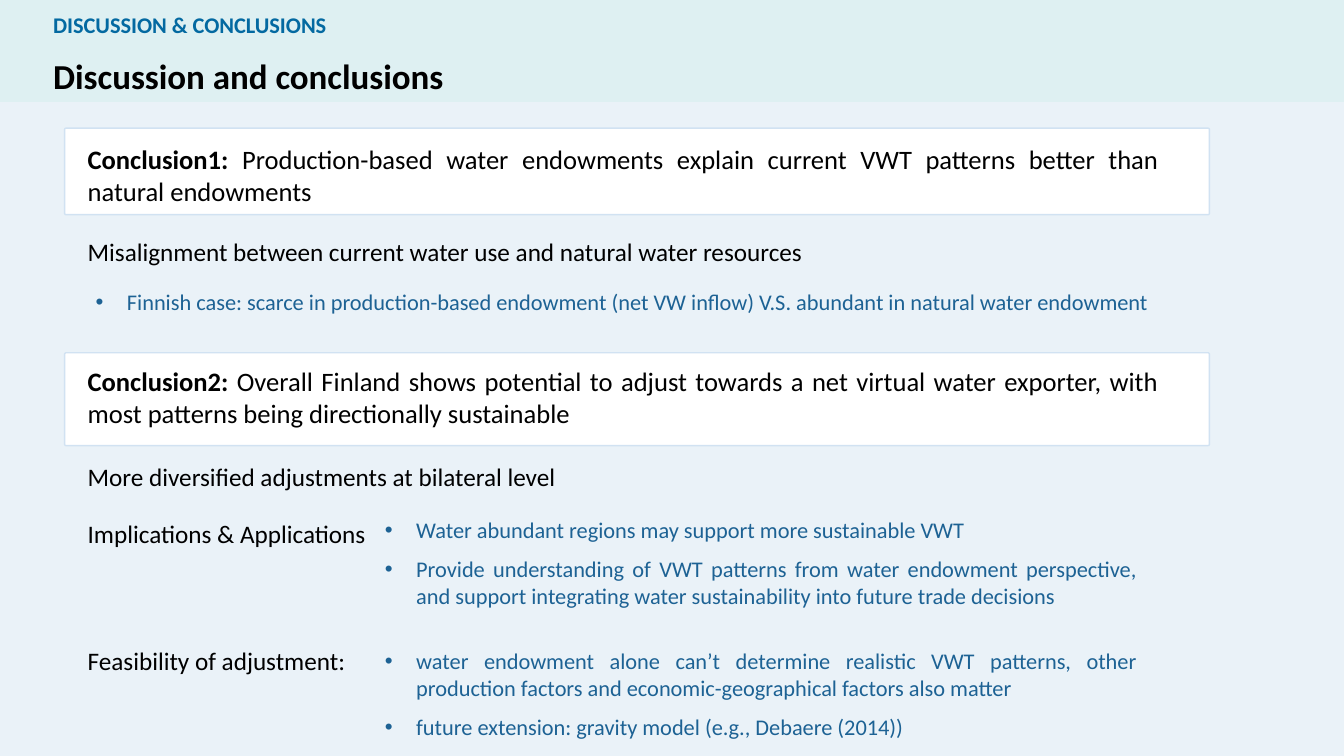
from lxml import etree
from pptx import Presentation
from pptx import util as u
from pptx.dml.color import RGBColor
from pptx.enum import shapes, text
from pptx.oxml import ns

FONT = "Calibri"
BACKGROUND = RGBColor(0xEA, 0xF2, 0xF8)
BAND = RGBColor(0xDE, 0xF0, 0xF2)
WHITE = RGBColor(0xFF, 0xFF, 0xFF)
BORDER = RGBColor(0xD1, 0xE2, 0xF2)
BLACK = RGBColor(0, 0, 0)
SECTION_BLUE = RGBColor(0x03, 0x69, 0xA1)
BULLET_BLUE = RGBColor(0x1D, 0x62, 0x94)

WIDTH = 33.87
LEFT = 1.96
JUSTIFY = text.PP_ALIGN.JUSTIFY


def add_panel(page, kind, left, top, width, height, fill, border=None):
    panel = page.shapes.add_shape(
        kind, u.Cm(left), u.Cm(top), u.Cm(width), u.Cm(height))
    panel.shadow.inherit = False
    panel.fill.solid()
    panel.fill.fore_color.rgb = fill
    if border is None:
        panel.line.fill.background()
    else:
        panel.adjustments[0] = 0.015
        panel.line.color.rgb = border
        panel.line.width = u.Pt(1)


def add_frame(page, left, top, width, height):
    box = page.shapes.add_textbox(
        u.Cm(left), u.Cm(top), u.Cm(width), u.Cm(height))
    box.text_frame.word_wrap = True
    return box.text_frame


def add_span(para, words, size, color=BLACK, bold=False):
    span = para.add_run()
    span.text = words
    span.font.name = FONT
    span.font.size = u.Pt(size)
    span.font.color.rgb = color
    span.font.bold = bold


def add_label(page, left, top, width, height, words, size,
              color=BLACK, bold=False):
    frame = add_frame(page, left, top, width, height)
    add_span(frame.paragraphs[0], words, size, color, bold)
    return frame


def add_conclusion(page, top, height, text_top, heading, statement):
    add_panel(page, shapes.MSO_SHAPE.ROUNDED_RECTANGLE,
              1.63, top, 28.85, height, WHITE, BORDER)
    para = add_frame(page, LEFT, text_top, 27.48, 1.88).paragraphs[0]
    para.alignment = JUSTIFY
    add_span(para, heading, 19, bold=True)
    add_span(para, statement, 19)


def add_bullets(page, left, top, width, height, space_after, points):
    frame = add_frame(page, left, top, width, height)
    for index, point in enumerate(points):
        para = frame.add_paragraph() if index else frame.paragraphs[0]
        para.alignment = JUSTIFY
        para.space_after = u.Pt(space_after)
        properties = para._p.get_or_add_pPr()
        properties.set("marL", str(u.Cm(0.79)))
        properties.set("indent", str(-u.Cm(0.79)))
        face = etree.SubElement(properties, ns.qn("a:buFont"))
        face.set("typeface", "Arial")
        mark = etree.SubElement(properties, ns.qn("a:buChar"))
        mark.set("char", "•")
        add_span(para, point, 16, BULLET_BLUE)


def main():
    deck = Presentation()
    deck.slide_width = u.Cm(WIDTH)
    deck.slide_height = u.Cm(19.05)
    page = deck.slides.add_slide(deck.slide_layouts[6])
    page.background.fill.solid()
    page.background.fill.fore_color.rgb = BACKGROUND

    add_panel(page, shapes.MSO_SHAPE.RECTANGLE, 0, 0, WIDTH, 2.57, BAND)
    section = add_label(page, 1.09, 0.25, 7.98, 0.76,
                        "DISCUSSION & CONCLUSIONS", 16, SECTION_BLUE, True)
    section.vertical_anchor = text.MSO_ANCHOR.MIDDLE
    add_label(page, 1.09, 1.24, 32.31, 1.32,
              "Discussion and conclusions", 25, bold=True)

    add_conclusion(page, 3.23, 2.18, 3.48, "Conclusion1: ",
                   "Production-based water endowments explain current VWT "
                   "patterns better than natural endowments")
    add_label(page, LEFT, 5.82, 22.89, 1.02,
              "Misalignment between current water use and natural water "
              "resources", 18)
    add_bullets(page, 2.16, 7.14, 27.46, 0.94, 12, [
        "Finnish case: scarce in production-based endowment (net VW inflow) "
        "V.S. abundant in natural water endowment"])

    add_conclusion(page, 8.89, 2.34, 9.07, "Conclusion2: ",
                   "Overall Finland shows potential to adjust towards a net "
                   "virtual water exporter, with most patterns being "
                   "directionally sustainable")
    diversified = add_label(page, LEFT, 11.51, 13.31, 1.02,
                            "More diversified adjustments at bilateral level",
                            18)
    diversified.paragraphs[0].alignment = JUSTIFY

    topics = [
        (12.93, 12.88, "Implications & Applications", [
            "Water abundant regions may support more sustainable VWT",
            "Provide understanding of VWT patterns from water endowment "
            "perspective, and support integrating water sustainability into "
            "future trade decisions"]),
        (16.13, 16.18, "Feasibility of adjustment:", [
            "water endowment alone can’t determine realistic VWT patterns, "
            "other production factors and economic-geographical factors also "
            "matter",
            "future extension: gravity model (e.g., Debaere (2014))"]),
    ]
    for label_top, points_top, label, points in topics:
        add_label(page, LEFT, label_top, 10.03, 1.02, label, 18)
        add_bullets(page, 9.45, points_top, 19.46, 2.64, 9, points)

    deck.save("out.pptx")


if __name__ == "__main__":
    main()
